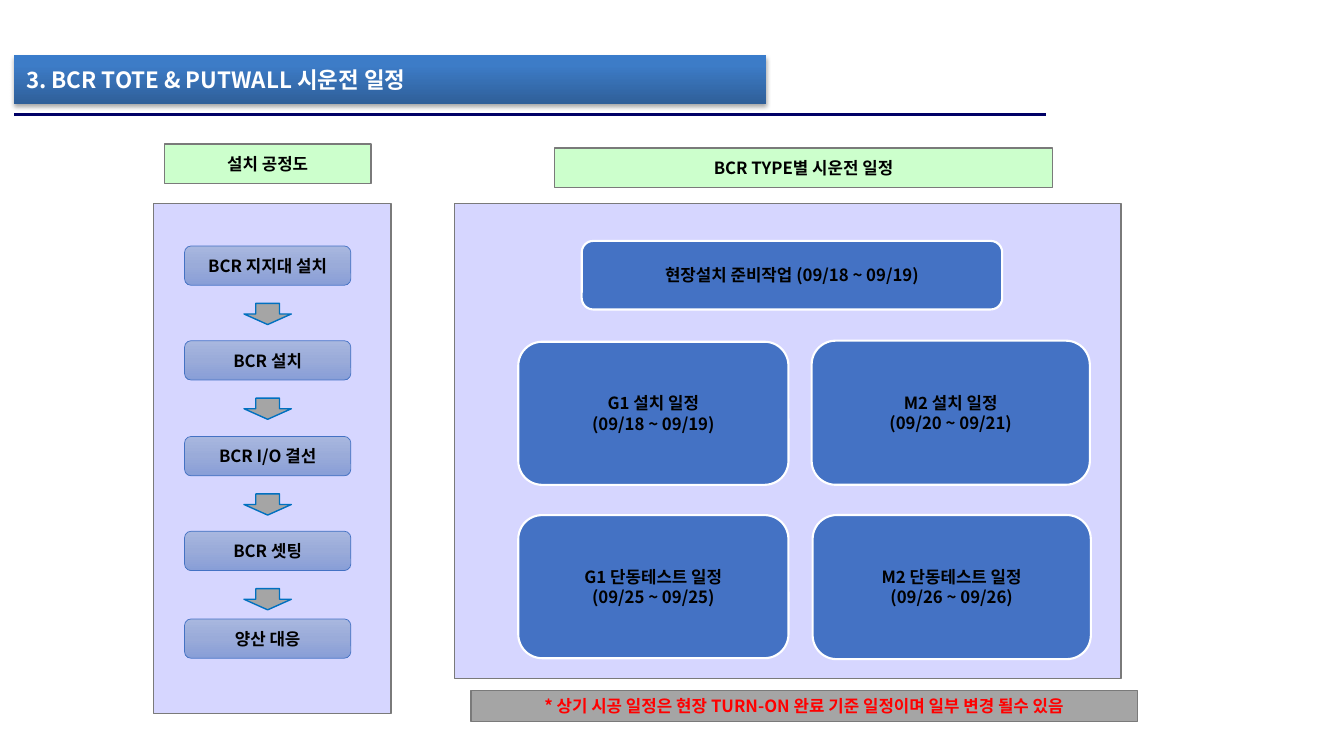
from dataclasses import dataclass

import lxml.etree
import pptx
import pptx.dml.color
import pptx.enum.dml
import pptx.enum.shapes
import pptx.enum.text
import pptx.oxml.ns
import pptx.shapes.autoshape
import pptx.slide
import pptx.util

EMU_PER_PX = 9144  # 100 px to the inch
FONT = "Noto Sans CJK KR"
RECTANGLE = pptx.enum.shapes.MSO_SHAPE.RECTANGLE
ROUNDED = pptx.enum.shapes.MSO_SHAPE.ROUNDED_RECTANGLE
DOWN_ARROW = pptx.enum.shapes.MSO_SHAPE.DOWN_ARROW
CENTER = pptx.enum.text.PP_ALIGN.CENTER
LEFT = pptx.enum.text.PP_ALIGN.LEFT


@dataclass(frozen=True)
class Style:
    """A fill is one colour, or (percent, colour) stops from top to bottom."""
    fill: str | tuple[tuple[int, str], ...]
    line: str | None = "7A7A7A"
    line_width: float = 1
    geometry: pptx.enum.shapes.MSO_SHAPE = RECTANGLE
    opacity: int = 100
    text_color: str = "000000"
    text_size: int = 12
    align: pptx.enum.text.PP_ALIGN = CENTER
    side_margin: int = 0


@dataclass(frozen=True)
class Box:
    left: int
    top: int
    width: int
    height: int
    style: Style
    text: str = ""


TITLE = Style(((0, "3A7CCB"), (20, "3D7CC7"), (100, "2F5F99")), line=None,
              text_color="FFFFFF", text_size=16, align=LEFT, side_margin=12)
PANEL = Style("3333FF", opacity=20)
HEADING = Style("CCFFCC")
STEP = Style(((0, "A8B7DF"), (50, "9AABD9"), (100, "889ED7")), "4472C4", 0.5, ROUNDED)
ARROW = Style("A5A5A5", "0070C0", geometry=DOWN_ARROW)
SCHEDULE = Style("4472C4", "FFFFFF", 1.5, ROUNDED)
NOTE = Style("A5A5A5", text_color="FF0000")

TITLE_BOX = Box(14, 55, 746, 48, TITLE, "3. BCR TOTE & PUTWALL 시운전 일정")
BOXES = (
    Box(451, 202, 661, 471, PANEL),
    Box(152, 202, 236, 506, PANEL),
    Box(163, 143, 205, 39, HEADING, "설치 공정도"),
    Box(550, 147, 494, 39, HEADING, "BCR TYPE별 시운전 일정"),
    Box(577, 239, 417, 68, SCHEDULE, "현장설치 준비작업 (09/18 ~ 09/19)"),
    Box(514, 339, 268, 142, SCHEDULE, "G1 설치 일정\n(09/18 ~ 09/19)"),
    Box(805, 338, 276, 143, SCHEDULE, "M2 설치 일정\n(09/20 ~ 09/21)"),
    Box(514, 511, 268, 142, SCHEDULE, "G1 단동테스트 일정\n(09/25 ~ 09/25)"),
    Box(806, 511, 276, 143, SCHEDULE, "M2 단동테스트 일정\n(09/26 ~ 09/26)"),
    Box(467, 685, 661, 31, NOTE,
        "* 상기 시공 일정은 현장 TURN-ON 완료 기준 일정이며 일부 변경 될수 있음"),
)
INSTALL_STEPS = (
    (244, "BCR 지지대 설치"),
    (338, "BCR 설치"),
    (433, "BCR I/O 결선"),
    (527, "BCR 셋팅"),
    (614, "양산 대응"),
)


def px(length: int) -> pptx.util.Emu:
    return pptx.util.Emu(length * EMU_PER_PX)


def rgb(color: str) -> pptx.dml.color.RGBColor:
    return pptx.dml.color.RGBColor.from_string(color)


def add_element(parent: lxml.etree.ElementBase, tag: str,
                **attributes: str) -> lxml.etree.ElementBase:
    return lxml.etree.SubElement(parent, pptx.oxml.ns.qn(tag), attributes)


def apply_fill(shape: pptx.shapes.autoshape.Shape, style: Style) -> None:
    properties = shape.element.spPr
    if isinstance(style.fill, str):
        shape.fill.solid()
        shape.fill.fore_color.rgb = rgb(style.fill)
        if style.opacity < 100:
            color = properties.find(".//" + pptx.oxml.ns.qn("a:srgbClr"))
            add_element(color, "a:alpha", val=str(style.opacity * 1000))
        return
    shape.fill.gradient()
    shape.fill.gradient_angle = 270
    stops = properties.find(".//" + pptx.oxml.ns.qn("a:gsLst"))
    for stop in list(stops):
        stops.remove(stop)
    for percent, color in style.fill:
        stop = add_element(stops, "a:gs", pos=str(percent * 1000))
        add_element(stop, "a:srgbClr", val=color)


def write_text(shape: pptx.shapes.autoshape.Shape, text: str, style: Style) -> None:
    frame = shape.text_frame
    frame.word_wrap = True
    frame.vertical_anchor = pptx.enum.text.MSO_ANCHOR.MIDDLE
    frame.margin_left = frame.margin_right = px(style.side_margin)
    frame.margin_top = frame.margin_bottom = px(5)
    frame.text = text
    for paragraph in frame.paragraphs:
        paragraph.alignment = style.align
        for run in paragraph.runs:
            run.font.name = FONT
            run.font.size = pptx.util.Pt(style.text_size)
            run.font.bold = True
            run.font.color.rgb = rgb(style.text_color)
            add_element(run.font._element, "a:ea", typeface=FONT)


def draw_box(slide: pptx.slide.Slide, box: Box) -> pptx.shapes.autoshape.Shape:
    style = box.style
    shape = slide.shapes.add_shape(style.geometry, px(box.left), px(box.top),
                                   px(box.width), px(box.height))
    shape.shadow.inherit = False
    apply_fill(shape, style)
    if style.line is None:
        shape.line.fill.background()
    else:
        shape.line.color.rgb = rgb(style.line)
        shape.line.width = pptx.util.Pt(style.line_width)
    if box.text:
        write_text(shape, box.text, style)
    return shape


def draw_title(slide: pptx.slide.Slide) -> None:
    shape = draw_box(slide, TITLE_BOX)
    effects = shape.element.spPr.find(pptx.oxml.ns.qn("a:effectLst"))
    shadow = add_element(effects, "a:outerShdw", blurRad="40000", dist="23000",
                         dir="5400000", rotWithShape="0")
    color = add_element(shadow, "a:srgbClr", val="000000")
    add_element(color, "a:alpha", val="35000")

    rule = slide.shapes.add_connector(pptx.enum.shapes.MSO_CONNECTOR.STRAIGHT,
                                      px(14), px(114), px(1037), px(114))
    rule.line.color.rgb = rgb("000066")
    rule.line.width = pptx.util.Pt(2.25)
    add_element(rule.element.spPr, "a:effectLst")


def draw_install_steps(slide: pptx.slide.Slide) -> None:
    """Stack the steps, with an arrow below each one but the last."""
    for top, text in INSTALL_STEPS:
        draw_box(slide, Box(183, top, 165, 39, STEP, text))
    for top, _ in INSTALL_STEPS[:-1]:
        draw_box(slide, Box(242, top + 57, 47, 21, ARROW))


def main() -> None:
    presentation = pptx.Presentation()
    presentation.slide_width = px(1333)
    presentation.slide_height = px(750)
    slide = presentation.slides.add_slide(presentation.slide_layouts[6])
    draw_title(slide)
    for box in BOXES:
        draw_box(slide, box)
    draw_install_steps(slide)
    presentation.save("out.pptx")


if __name__ == "__main__":
    main()
